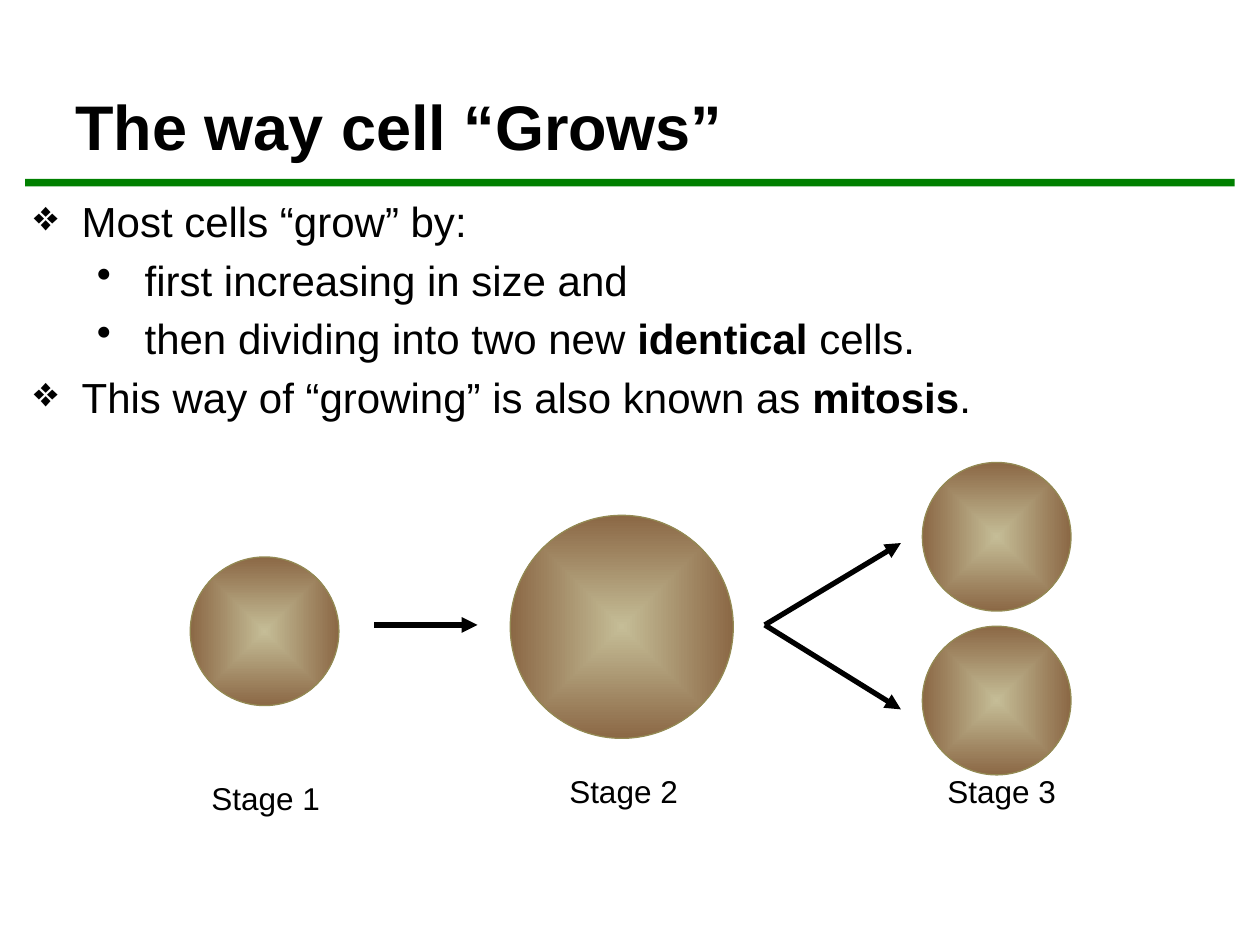
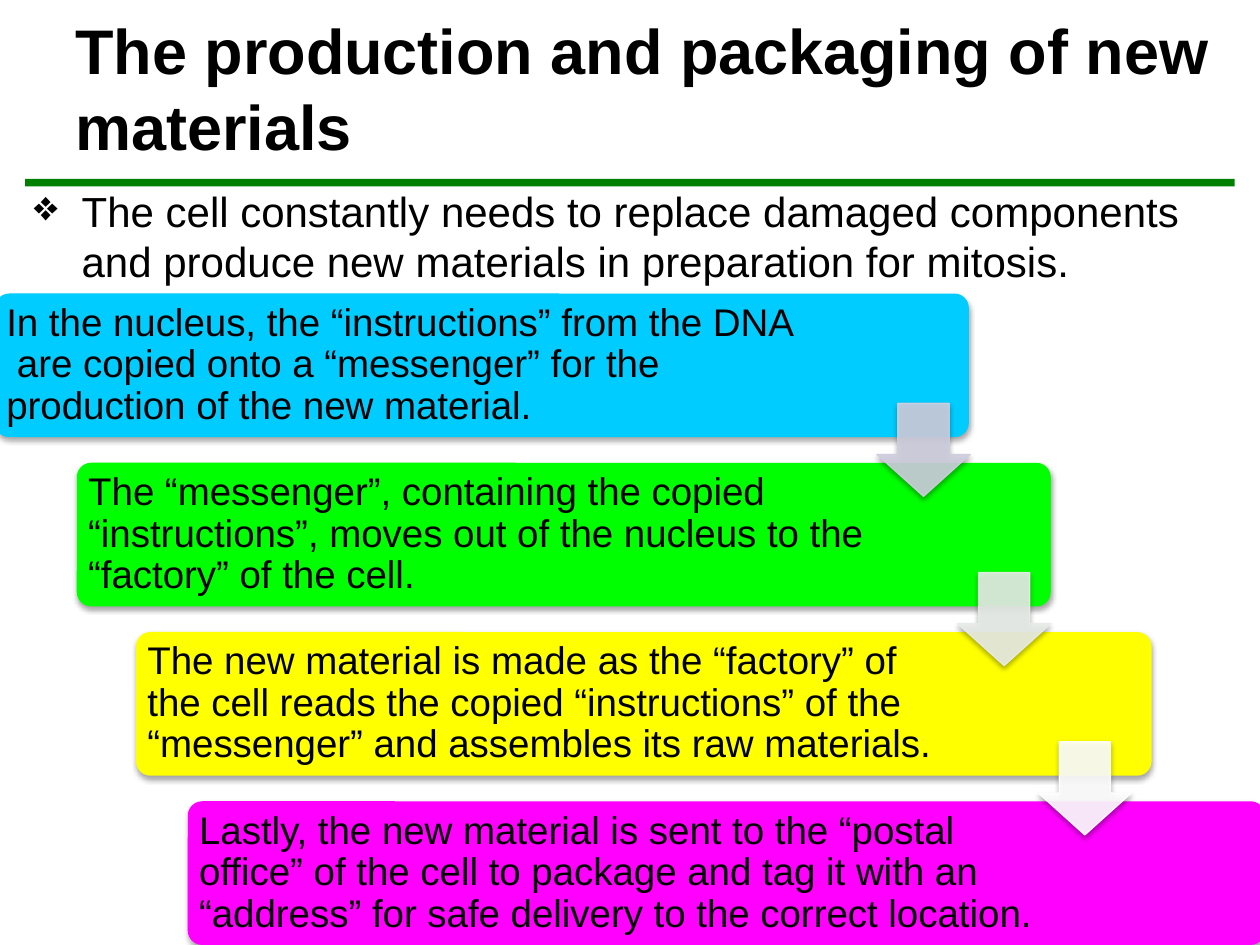
from dataclasses import dataclass

from pptx import Presentation
from pptx.dml.color import RGBColor
from pptx.enum.shapes import MSO_CONNECTOR, MSO_SHAPE
from pptx.enum.text import MSO_ANCHOR
from pptx.oxml import parse_xml
from pptx.oxml.ns import nsdecls, qn
from pptx.oxml.xmlchemy import OxmlElement
from pptx.util import Inches, Pt

RECTANGLE = MSO_SHAPE.RECTANGLE
ROUNDED = MSO_SHAPE.ROUNDED_RECTANGLE
OVAL = MSO_SHAPE.OVAL
DOWN_ARROW = MSO_SHAPE.DOWN_ARROW
STRAIGHT = MSO_CONNECTOR.STRAIGHT
TOP, MIDDLE, BOTTOM = MSO_ANCHOR.TOP, MSO_ANCHOR.MIDDLE, MSO_ANCHOR.BOTTOM


@dataclass(frozen=True)
class Theme:
    font: str = "Arial"
    ink: str = "000000"
    rule: str = "008000"
    cell_core: str = "C5BD97"
    cell_rim: str = "8B6845"
    cell_line: str = "938953"
    title_size: int = 36
    body_size: int = 24
    step_size: int = 22
    label_size: int = 18


THEME = Theme()

# Each bullet is its level followed by its (text, bold) spans.
GROWTH_BULLETS = [
    (0, [("Most cells “grow” by:", False)]),
    (1, [("first increasing in size and", False)]),
    (1, [("then dividing into two new ", False), ("identical", True), (" cells.", False)]),
    (0, [("This way of “growing” is also known as ", False), ("mitosis", True), (".", False)]),
]
MATERIAL_BULLETS = [
    (0, [("The cell constantly needs to replace damaged components and produce "
          "new materials in preparation for mitosis.", False)]),
]
BULLET_STYLES = {0: ("❖", 0.38), 1: ("•", 0.88)}
BULLET_HANG = 0.38

# Stage labels: text, left, top, width
STAGE_LABELS = [
    ("Stage 1", 1.58, 6.13, 1.08),
    ("Stage 2", 4.42, 6.08, 1.24),
    ("Stage 3", 7.42, 6.08, 1.12),
]
# Cells: left, top, diameter
CELLS = [(1.51, 4.42, 1.18), (7.32, 3.67, 1.18), (7.32, 4.97, 1.18), (4.05, 4.09, 1.77)]
GROWTH_ARROWS = [
    ((2.97, 4.96), (3.79, 4.96)),
    ((6.07, 4.96), (7.15, 4.31)),
    ((6.07, 4.96), (7.15, 5.63)),
]

# Steps: left, band width, text width, colour, text
STEPS = [
    (-0.04, 7.73, 6.48, "00CCFF",
     "In the nucleus, the “instructions” from the DNA  are copied onto a "
     "“messenger” for the production of the new material."),
    (0.61, 7.73, 6.35, "00FF00",
     "The “messenger”, containing the copied “instructions”, moves out of the "
     "nucleus to the “factory” of the cell."),
    (1.08, 8.06, 6.63, "FFFF00",
     "The new material is made as the “factory” of the cell reads the copied "
     "“instructions” of the “messenger” and assembles its raw materials."),
    (1.49, 8.55, 7.02, "FF00FF",
     "Lastly, the new material is sent to the “postal office” of the cell to "
     "package and tag it with an “address” for safe delivery to the correct location."),
]
STEP_ARROW_COLOURS = ["CECEDE", "E8ECE8", "FFFFFF"]
STEP_TOP, STEP_HEIGHT, SLIDE_HEIGHT = 2.33, 1.14, 7.5
STEP_PITCH = (SLIDE_HEIGHT - STEP_HEIGHT - STEP_TOP) / (len(STEPS) - 1)


def rgb(colour):
    return RGBColor.from_string(colour)


def style_font(font, size, bold=False):
    font.name = THEME.font
    font.size = Pt(size)
    font.bold = bold
    font.color.rgb = rgb(THEME.ink)


def add_box(page, left, top, width, height, anchor=TOP):
    box = page.shapes.add_textbox(Inches(left), Inches(top), Inches(width), Inches(height))
    box.text_frame.word_wrap = True
    box.text_frame.vertical_anchor = anchor
    return box


def add_text(page, text, area, size, bold=False, anchor=TOP):
    box = add_box(page, *area, anchor)
    para = box.text_frame.paragraphs[0]
    para.text = text
    style_font(para.runs[0].font, size, bold)
    return box


def set_bullet(para, level):
    mark, indent = BULLET_STYLES[level]
    properties = para._p.get_or_add_pPr()
    properties.set("marL", str(Inches(indent)))
    properties.set("indent", str(-Inches(BULLET_HANG)))
    bullet = OxmlElement("a:buChar")
    bullet.set("char", mark)
    properties.append(bullet)


def add_bullets(page, bullets, top, height):
    frame = add_box(page, 0.17, top, 9.67, height).text_frame
    for index, (level, spans) in enumerate(bullets):
        para = frame.add_paragraph() if index else frame.paragraphs[0]
        para.level = level
        set_bullet(para, level)
        if index:
            para.space_before = Pt(0.2 * THEME.body_size)
        for text, bold in spans:
            span = para.add_run()
            span.text = text
            style_font(span.font, THEME.body_size, bold)


def add_plain_shape(page, kind, left, top, width, height, colour):
    shape = page.shapes.add_shape(
        kind, Inches(left), Inches(top), Inches(width), Inches(height))
    shape.shadow.inherit = False
    shape.fill.solid()
    shape.fill.fore_color.rgb = rgb(colour)
    shape.line.fill.background()
    return shape


def add_drop_shadow(shape):
    effects = shape._element.spPr.find(qn("a:effectLst"))
    effects.append(parse_xml(
        f'<a:outerShdw {nsdecls("a")} blurRad="{Pt(3.1)}" dist="{Pt(1.8)}" '
        'dir="5400000" rotWithShape="0"><a:srgbClr val="000000">'
        '<a:alpha val="35000"/></a:srgbClr></a:outerShdw>'))


def add_cell(page, left, top, diameter):
    """Draw a round cell shaded from its core out to its rim."""
    cell = add_plain_shape(page, OVAL, left, top, diameter, diameter, THEME.cell_rim)
    cell.line.color.rgb = rgb(THEME.cell_line)
    cell.line.width = Pt(0.75)
    properties = cell._element.spPr
    properties.replace(properties.find(qn("a:solidFill")), parse_xml(
        f'<a:gradFill {nsdecls("a")} rotWithShape="1"><a:gsLst>'
        f'<a:gs pos="0"><a:srgbClr val="{THEME.cell_core}"/></a:gs>'
        f'<a:gs pos="100000"><a:srgbClr val="{THEME.cell_rim}"/></a:gs></a:gsLst>'
        '<a:path path="shape"><a:fillToRect l="50000" t="50000" r="50000" b="50000"/>'
        '</a:path></a:gradFill>'))


def add_growth_arrow(page, start, end):
    arrow = page.shapes.add_connector(STRAIGHT, *map(Inches, start + end))
    arrow.line.color.rgb = rgb(THEME.ink)
    arrow.line.width = Pt(3)
    head = OxmlElement("a:tailEnd")
    head.set("type", "triangle")
    arrow.line._get_or_add_ln().append(head)
    arrow._element.spPr.append(OxmlElement("a:effectLst"))


def add_step(page, index, left, width, text_width, colour, text):
    top = STEP_TOP + index * STEP_PITCH
    band = add_plain_shape(page, ROUNDED, left, top, width, STEP_HEIGHT, colour)
    band.adjustments[0] = 0.1
    add_drop_shadow(band)
    box = add_text(page, text, (left, top, text_width, STEP_HEIGHT),
                   THEME.step_size, anchor=MIDDLE)
    frame = box.text_frame
    frame.margin_left = frame.margin_right = Inches(0.09)
    frame.margin_top = frame.margin_bottom = Inches(0.09)
    frame.paragraphs[0].line_spacing = 0.9


def add_step_arrow(page, index, colour):
    arrow = add_plain_shape(page, DOWN_ARROW, 6.96 + 0.64 * index,
                            3.2 + STEP_PITCH * index, 0.74, 0.74, colour)
    arrow.adjustments[0] = 0.55
    arrow.adjustments[1] = 0.45
    arrow.line.color.rgb = rgb(colour)
    arrow.line.width = Pt(0.75)
    for paint in arrow._element.spPr.iter(qn("a:srgbClr")):
        alpha = OxmlElement("a:alpha")
        alpha.set("val", "90000")
        paint.append(alpha)
    add_drop_shadow(arrow)


def add_page(deck, title):
    """Add a blank page with the shared green rule and title."""
    page = deck.slides.add_slide(deck.slide_layouts[6])
    add_plain_shape(page, RECTANGLE, 0.2, 1.42, 9.6, 0.06, THEME.rule)
    add_text(page, title, (0.5, 0.17, 9.37, 1.17), THEME.title_size, True, BOTTOM)
    return page


def build_growth_page(deck):
    page = add_page(deck, "The way cell “Grows”")
    add_bullets(page, GROWTH_BULLETS, 1.5, 4.42)
    for text, left, top, width in STAGE_LABELS:
        add_text(page, text, (left, top, width, 0.42), THEME.label_size)
    for cell in CELLS:
        add_cell(page, *cell)
    for start, end in GROWTH_ARROWS:
        add_growth_arrow(page, start, end)


def build_materials_page(deck):
    page = add_page(deck, "The production and packaging of new materials")
    add_bullets(page, MATERIAL_BULLETS, 1.42, 3.33)
    for index, step in enumerate(STEPS):
        add_step(page, index, *step)
    for index, colour in enumerate(STEP_ARROW_COLOURS):
        add_step_arrow(page, index, colour)


def main():
    deck = Presentation()
    deck.slide_width = Inches(10)
    deck.slide_height = Inches(SLIDE_HEIGHT)
    build_growth_page(deck)
    build_materials_page(deck)
    deck.save("out.pptx")


if __name__ == "__main__":
    main()
